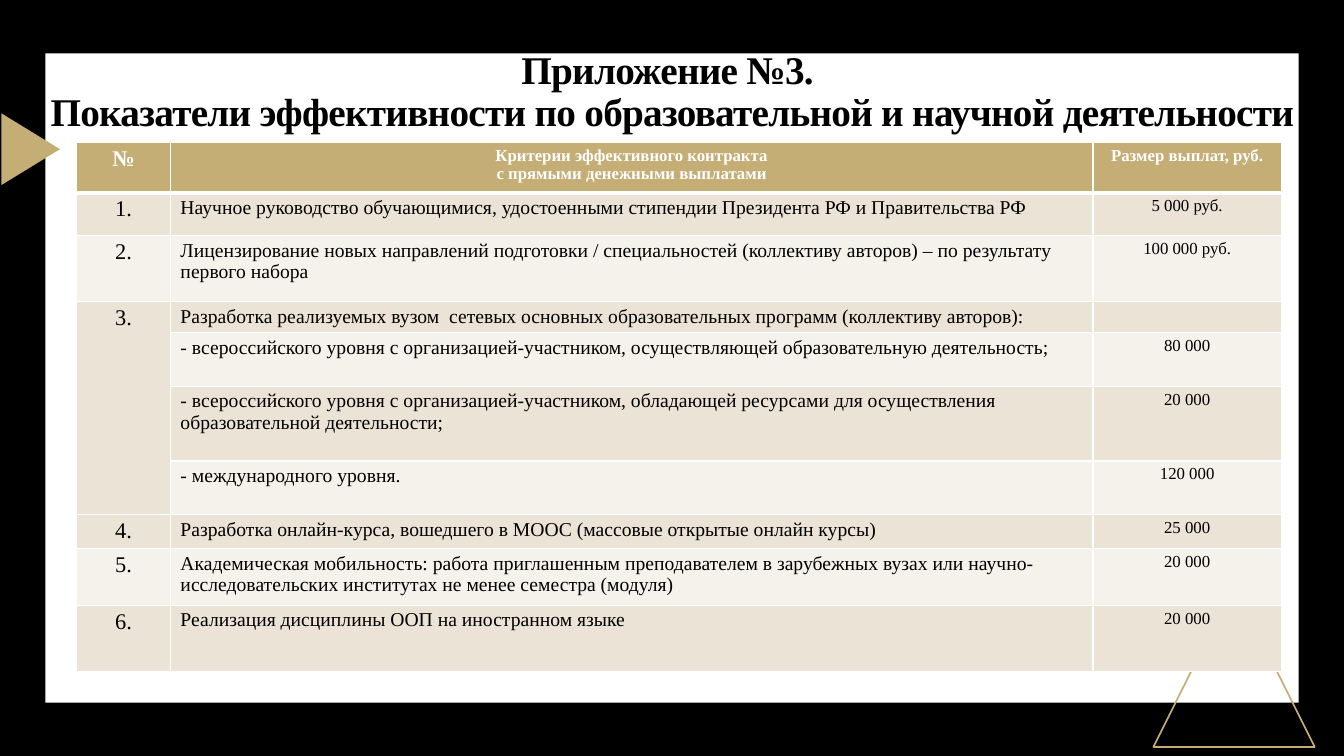
from pptx import Presentation
from pptx.dml.color import RGBColor
from pptx.enum.shapes import MSO_SHAPE
from pptx.enum.text import MSO_ANCHOR, PP_ALIGN
from pptx.oxml import parse_xml
from pptx.oxml.ns import nsdecls
from pptx.util import Inches, Pt

WIDE, HIGH = Inches(13.33), Inches(7.5)
FACE = "Times New Roman"
HUES = {"black": "000000", "white": "FFFFFF", "gold": "C4AE75",
        "sand": "EAE3D6", "cream": "F5F2EC"}
COLS = (6.98, 68.64, 14.03)
ROWS = (6.7, 5.7, 8.7, 4.1, 7.1, 9.9, 7.1, 4.5, 7.5, 8.7)
TITLE = ("Приложение №3. \v"
         "Показатели эффективности по образовательной и научной деятельности")
DATA = (
    ("№", "Критерии эффективного контракта\nс прямыми денежными выплатами",
     "Размер выплат, руб."),
    ("1.", "Научное руководство обучающимися, удостоенными стипендии "
     "Президента РФ и Правительства РФ", "5 000 руб."),
    ("2.", "Лицензирование новых направлений подготовки / специальностей "
     "(коллективу авторов) – по результату первого набора", "100 000 руб."),
    ("3.", "Разработка реализуемых вузом  сетевых основных образовательных "
     "программ (коллективу авторов):", ""),
    ("", "- всероссийского уровня с организацией-участником, "
     "осуществляющей образовательную деятельность;", "80 000"),
    ("", "- всероссийского уровня с организацией-участником, обладающей "
     "ресурсами для осуществления образовательной деятельности;", "20 000"),
    ("", "- международного уровня.", "120 000"),
    ("4.", "Разработка онлайн-курса, вошедшего в MOOC "
     "(массовые открытые онлайн курсы)", "25 000"),
    ("5.", "Академическая мобильность: работа приглашенным преподавателем "
     "в зарубежных вузах или научно-исследовательских институтах "
     "не менее семестра (модуля)", "20 000"),
    ("6.", "Реализация дисциплины ООП на иностранном языке", "20 000"),
)


def put(item, form):
    for name, value in form.items():
        setattr(item, name, value)


def hue(name):
    return RGBColor.from_string(HUES[name])


def across(share):
    return round(WIDE * share / 100)


def down(share):
    return round(HIGH * share / 100)


def area(left, top, width, height):
    return across(left), down(top), across(width), down(height)


def paint(item, name):
    item.fill.solid()
    item.fill.fore_color.rgb = hue(name)


def add_form(slide, kind, place, fill=None, line=None, turn=0):
    form = slide.shapes.add_shape(kind, *area(*place))
    put(form, {"rotation": turn})
    form.shadow.inherit = False
    if fill:
        paint(form, fill)
    else:
        form.fill.background()
    if line:
        form.line.color.rgb = hue(line)
        form.line.width = Pt(1.25)
    else:
        form.line.fill.background()


def style(para, size, color, bold, align):
    para.alignment = align
    if not para.runs:
        para._p.append(parse_xml(
            f'<a:endParaRPr {nsdecls("a")} sz="{size * 100}"/>'))
    for run in para.runs:
        put(run.font, {"name": FACE, "size": Pt(size), "bold": bold})
        run.font.color.rgb = hue(color)


def set_title(slide):
    title = slide.shapes.title
    put(title, dict(zip(("left", "top", "width", "height"),
                        area(2.33, 5.47, 95.35, 13.6))))
    frame = title.text_frame
    put(frame, {"text": TITLE, "word_wrap": True,
                "vertical_anchor": MSO_ANCHOR.MIDDLE})
    para = frame.paragraphs[0]
    para.line_spacing = 0.9
    style(para, 28, "black", True, PP_ALIGN.CENTER)
    for run in para.runs:
        run.font._element.set("spc", "-50")
    slide.shapes._spTree.append(title._element)


def edge(cell, side, width):
    cell._tc.get_or_add_tcPr().append(parse_xml(
        f'<a:ln{side} {nsdecls("a")} w="{Pt(width)}"><a:solidFill>'
        f'<a:srgbClr val="{HUES["white"]}"/></a:solidFill></a:ln{side}>'))


def set_cell(cell, text, row, col):
    head = row == 0
    put(cell, {"text": text, "margin_top": Inches(0.04),
               "margin_bottom": Inches(0.04)})
    for side in "LRTB":
        thick = (row, side) in ((0, "B"), (1, "T"))
        edge(cell, side, 3 if thick else 1)
    paint(cell, "gold" if head else "sand" if row % 2 else "cream")
    size = (16, 12 if head else 14, 12)[col]
    align = PP_ALIGN.CENTER if head or col != 1 else PP_ALIGN.LEFT
    for para in cell.text_frame.paragraphs:
        style(para, size, "white" if head else "black", head, align)


def add_grid(slide):
    place = area(5.7, 18.8, sum(COLS), sum(ROWS))
    table = slide.shapes.add_table(len(ROWS), len(COLS), *place).table
    put(table, {"horz_banding": False})
    for col, share in zip(table.columns, COLS):
        col.width = across(share)
    for row, share in zip(table.rows, ROWS):
        row.height = down(share)
    for row, texts in enumerate(DATA):
        for col, text in enumerate(texts):
            set_cell(table.cell(row, col), text, row, col)
    table.cell(3, 0).merge(table.cell(6, 0))


def main():
    deck = Presentation()
    put(deck, {"slide_width": WIDE, "slide_height": HIGH})
    slide = deck.slides.add_slide(deck.slide_layouts[5])
    paint(slide.background, "black")
    peak = MSO_SHAPE.ISOSCELES_TRIANGLE
    add_form(slide, MSO_SHAPE.RECTANGLE, (3.38, 7.07, 93.25, 85.87), "white")
    add_form(slide, peak, (85.82, 77.47, 12, 21.33), line="gold")
    add_form(slide, peak, (-0.38, 15.87, 5.33, 7.73), "gold", turn=90)
    set_title(slide)
    add_grid(slide)
    deck.save("out.pptx")


if __name__ == "__main__":
    main()
